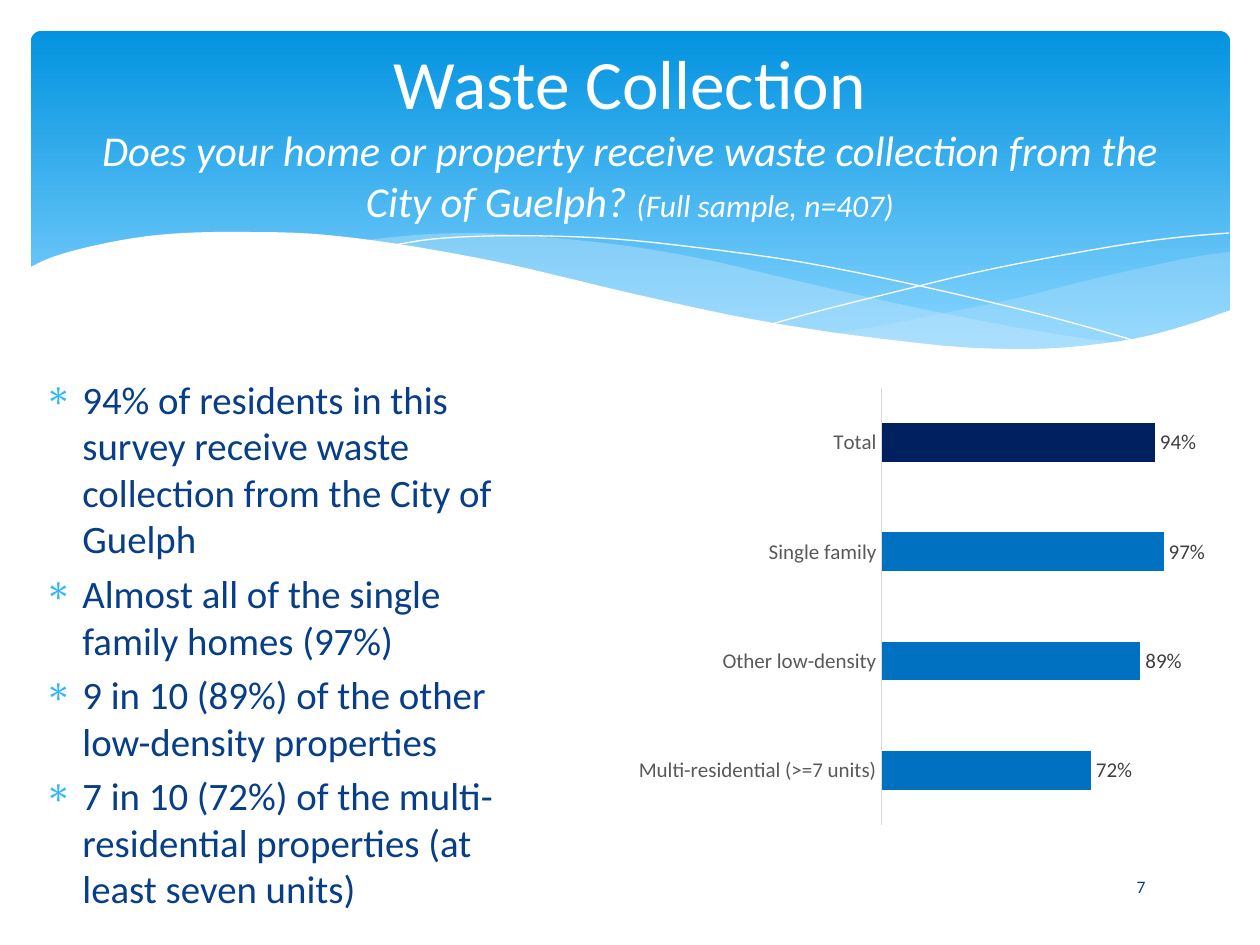
"""Build the Waste Collection survey slide with its wave banner and bar chart."""
from dataclasses import dataclass

from lxml import etree
from pptx import Presentation
from pptx.chart.data import CategoryChartData
from pptx.dml.color import RGBColor
from pptx.enum.chart import XL_CHART_TYPE, XL_LABEL_POSITION, XL_TICK_MARK
from pptx.enum.shapes import MSO_SHAPE
from pptx.enum.text import MSO_ANCHOR, PP_ALIGN
from pptx.oxml.ns import qn
from pptx.util import Emu, Pt

BAR = XL_CHART_TYPE.BAR_CLUSTERED
OUTSIDE_END = XL_LABEL_POSITION.OUTSIDE_END
NO_TICK = XL_TICK_MARK.NONE
ROUNDED = MSO_SHAPE.ROUNDED_RECTANGLE
TOP, MIDDLE = MSO_ANCHOR.TOP, MSO_ANCHOR.MIDDLE
LEFT, CENTER = PP_ALIGN.LEFT, PP_ALIGN.CENTER


@dataclass(frozen=True)
class Theme:
    font: str = "Calibri"
    white: str = "FFFFFF"
    banner_top: str = "0293E0"
    banner_bottom: str = "83D3FE"
    wave: str = "C6E7FC"
    text: str = "073E87"
    bullet: str = "31B6FD"
    total_bar: str = "002060"
    bar: str = "0070C0"
    axis_text: str = "595959"
    axis_line: str = "D9D9D9"
    label: str = "404040"
    title_size: float = 39.6
    question_size: float = 24.3
    sample_size: float = 18
    body_size: float = 22.2
    chart_size: float = 12
    number_size: float = 10


THEME = Theme()
EMU_PER_PX = 914400 / 126
SLIDE_SIZE = (1260, 945)

TITLE = "Waste Collection"
QUESTION = "Does your home or property receive waste collection from the City of Guelph? "
SAMPLE = "(Full sample, n=407)"
PAGE_NUMBER = "7"
FINDINGS = [
    "94% of residents in this survey receive waste collection from the City of Guelph",
    "Almost all of the single family homes (97%)",
    "9 in 10 (89%) of the other low-density properties",
    "7 in 10 (72%) of the multi-residential properties (at least seven units)",
]
COLLECTION = {
    "Total": 0.94,
    "Single family": 0.97,
    "Other low-density": 0.89,
    "Multi-residential (>=7 units)": 0.72,
}
PLOT_AREA = {"x": 0.5, "y": 0.04, "w": 0.42, "h": 0.92}

BANNER_BOX = (31, 31, 1199, 340)
TITLE_BOX = (63, 47, 1134, 172)
BODY_BOX = (32, 369, 482, 475)
CHART_BOX = (535, 369, 693, 475)
NUMBER_BOX = (1061, 862, 160, 50)
BULLET_INDENT = 38

RIGHT_WAVE = [
    [(1230, 252), (1194, 257), (1142, 268), (1085, 281), (1014, 299), (949, 312),
     (890, 324), (833, 334)],
    [(833, 334), (888, 341), (954, 348), (1026, 350), (1087, 348), (1140, 339),
     (1178, 330), (1213, 318), (1230, 311)],
]
MIDDLE_WAVE = [
    [(360, 241), (394, 237), (433, 234), (479, 233), (529, 236), (586, 241), (648, 249),
     (717, 262), (793, 280), (890, 302), (977, 320), (1055, 334), (1125, 344)],
    [(1125, 344), (1080, 349), (1017, 350), (943, 348), (876, 340), (799, 329),
     (713, 312), (619, 292), (566, 280), (509, 266), (456, 256), (407, 247), (360, 241)],
]
FRONT_WAVE = [
    [(29, 268), (50, 258), (84, 248), (134, 238), (184, 233), (243, 232), (315, 234),
     (398, 244), (493, 261), (563, 277), (634, 294), (730, 315), (816, 330), (892, 340),
     (959, 347), (1019, 349), (1071, 347), (1133, 339), (1184, 326), (1231, 310)],
    [(1231, 415), (29, 415)],
]
FALLING_LINE = [[(389, 246), (433, 239), (488, 236), (546, 236), (616, 239), (701, 248),
                 (801, 262), (916, 285), (1047, 316), (1143, 343)]]
RISING_LINE = [[(772, 324), (823, 310), (907, 289), (978, 272), (1053, 257), (1128, 244),
                (1182, 237), (1229, 233)]]
FILLED_WAVES = [(RIGHT_WAVE, THEME.wave, 29), (MIDDLE_WAVE, THEME.wave, 40)]


def px(value):
    return Emu(round(value * EMU_PER_PX))


def place(box):
    return [px(value) for value in box]


def rgb(value):
    return RGBColor.from_string(value)


def style_font(font, size, color):
    font.name, font.size = THEME.font, Pt(size)
    font.color.rgb = rgb(color)


def smooth(knots, steps=4):
    padded = [knots[0], *knots, knots[-1]]
    points = [knots[0]]
    for a, b, c, d in zip(padded, padded[1:], padded[2:], padded[3:]):
        for step in range(1, steps + 1):
            t = step / steps
            points.append(tuple(
                (2 * q + (r - p) * t + (2 * p - 5 * q + 4 * r - s) * t ** 2
                 + (3 * q - p - 3 * r + s) * t ** 3) / 2
                for p, q, r, s in zip(a, b, c, d)))
    return points


def add_curve(slide, edges, closed):
    points = [place(point) for edge in edges for point in smooth(edge)]
    builder = slide.shapes.build_freeform(*points[0])
    builder.add_line_segments(points[1:], close=closed)
    shape = builder.convert_to_shape()
    shape.shadow.inherit = False
    return shape


def add_wave(slide, edges, color, opacity=100):
    shape = add_curve(slide, edges, True)
    shape.fill.solid()
    shape.fill.fore_color.rgb = rgb(color)
    shape.line.fill.background()
    if opacity < 100:
        fill_color = shape.element.spPr.find(".//" + qn("a:srgbClr"))
        etree.SubElement(fill_color, qn("a:alpha"), val=str(opacity * 1000))


def add_banner(slide):
    banner = slide.shapes.add_shape(ROUNDED, *place(BANNER_BOX))
    banner.adjustments[0] = 0.03
    banner.shadow.inherit = False
    banner.line.fill.background()
    banner.fill.gradient()
    banner.fill.gradient_angle = 270
    stops = [(0, THEME.banner_top), (0.9, THEME.banner_bottom)]
    for stop, (position, color) in zip(banner.fill.gradient_stops, stops):
        stop.position, stop.color.rgb = position, rgb(color)
    for edges, color, opacity in FILLED_WAVES:
        add_wave(slide, edges, color, opacity)
    for edges in (FALLING_LINE, RISING_LINE):
        line = add_curve(slide, edges, False)
        line.fill.background()
        line.line.color.rgb = rgb(THEME.white)
        line.line.width = Pt(0)
    add_wave(slide, FRONT_WAVE, THEME.white)


def add_text(slide, box, paragraphs, size, color, anchor=MIDDLE, align=CENTER, bullet=None):
    frame = slide.shapes.add_textbox(*place(box)).text_frame
    frame.word_wrap, frame.vertical_anchor = True, anchor
    for index, text in enumerate(paragraphs):
        paragraph = frame.add_paragraph() if index else frame.paragraphs[0]
        paragraph.text, paragraph.alignment = text, align
        if bullet:
            if index:
                paragraph.space_before = Pt(size * 0.2)
            properties = paragraph._p.get_or_add_pPr()
            properties.set("marL", str(px(BULLET_INDENT)))
            properties.set("indent", str(-px(BULLET_INDENT)))
            bullet_color = etree.SubElement(properties, qn("a:buClr"))
            etree.SubElement(bullet_color, qn("a:srgbClr"), val=THEME.bullet)
            etree.SubElement(properties, qn("a:buChar"), char=bullet)
        style_font(paragraph.font, size, color)
    return frame


def add_title(slide):
    frame = add_text(slide, TITLE_BOX, [TITLE], THEME.title_size, THEME.white)
    paragraph = frame.paragraphs[0]
    paragraph.add_line_break()
    for text, size in [(QUESTION, THEME.question_size), (SAMPLE, THEME.sample_size)]:
        run = paragraph.add_run()
        run.text, run.font.size, run.font.italic = text, Pt(size), True


def add_collection_chart(slide):
    data = CategoryChartData(number_format="0%")
    data.categories = list(COLLECTION)
    data.add_series("Series 1", COLLECTION.values())
    chart = slide.shapes.add_chart(BAR, *place(CHART_BOX), data).chart
    chart.has_legend = chart.has_title = False
    style_font(chart.font, THEME.chart_size, THEME.label)

    categories, values = chart.category_axis, chart.value_axis
    categories.reverse_order = True
    categories.major_tick_mark = categories.minor_tick_mark = NO_TICK
    categories.format.line.color.rgb = rgb(THEME.axis_line)
    categories.format.line.width = Pt(0.75)
    style_font(categories.tick_labels.font, THEME.chart_size, THEME.axis_text)
    values.minimum_scale, values.maximum_scale = 0, 1
    values.has_major_gridlines = values.visible = False

    plot = chart.plots[0]
    plot.gap_width, plot.vary_by_categories = 182, False
    series = plot.series[0]
    for index in range(len(COLLECTION)):
        fill = series.points[index].format.fill
        fill.solid()
        fill.fore_color.rgb = rgb(THEME.bar if index else THEME.total_bar)
    labels = series.data_labels
    labels.show_value, labels.position = True, OUTSIDE_END
    labels.number_format, labels.number_format_is_linked = "0%", False
    style_font(labels.font, THEME.chart_size, THEME.label)

    area = chart.element.find(".//" + qn("c:plotArea"))
    for old_layout in area.findall(qn("c:layout")):
        area.remove(old_layout)
    layout = etree.Element(qn("c:layout"))
    area.insert(0, layout)
    manual = etree.SubElement(layout, qn("c:manualLayout"))
    settings = {"layoutTarget": "inner", "xMode": "edge", "yMode": "edge", **PLOT_AREA}
    for name, value in settings.items():
        etree.SubElement(manual, qn("c:" + name), val=str(value))


def main():
    presentation = Presentation()
    presentation.slide_width, presentation.slide_height = place(SLIDE_SIZE)
    slide = presentation.slides.add_slide(presentation.slide_layouts[6])
    add_banner(slide)
    add_title(slide)
    add_text(slide, NUMBER_BOX, [PAGE_NUMBER], THEME.number_size, THEME.text)
    add_text(slide, BODY_BOX, FINDINGS, THEME.body_size, THEME.text, TOP, LEFT, "∗")
    add_collection_chart(slide)
    presentation.save("out.pptx")


if __name__ == "__main__":
    main()
